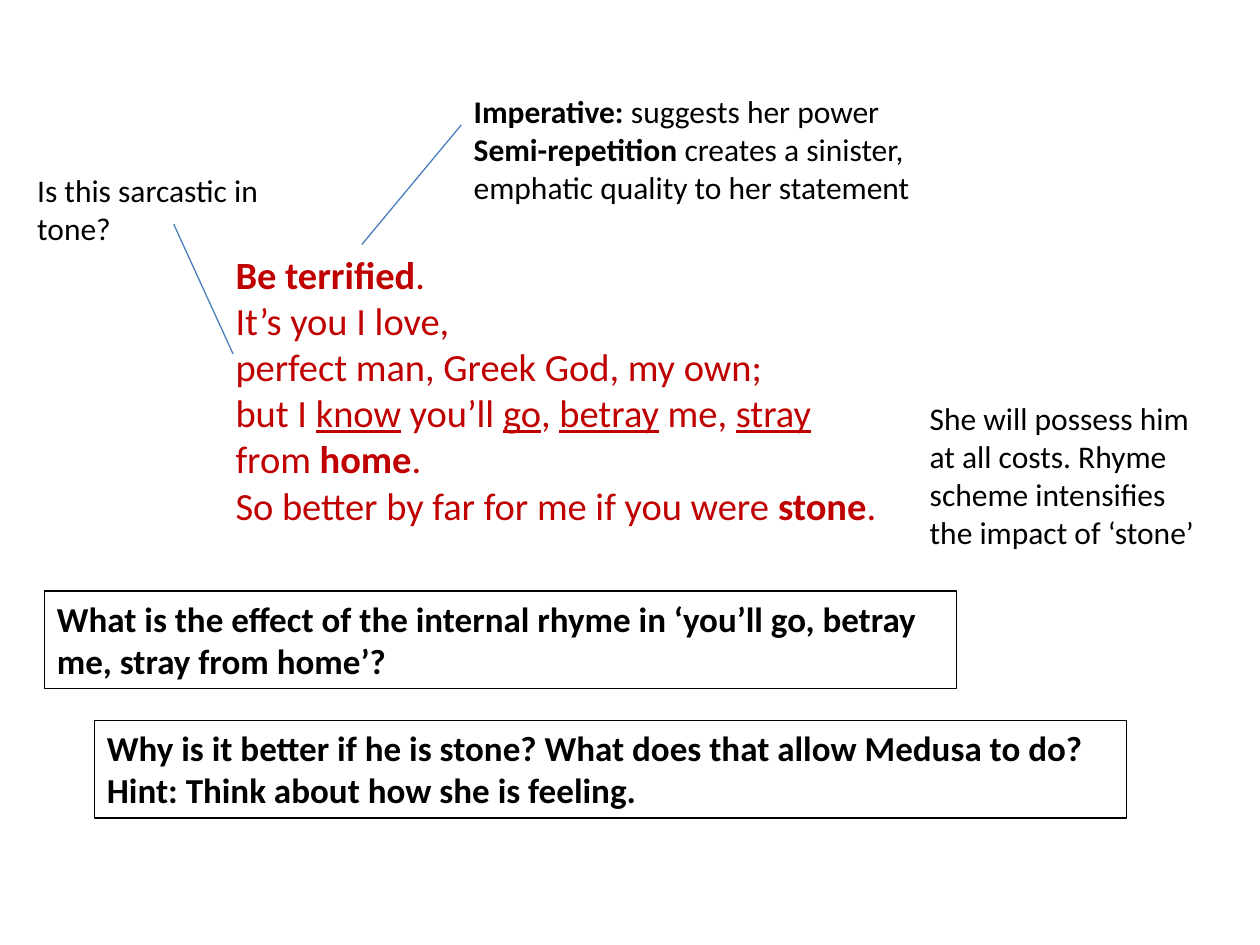
from pptx import Presentation
from pptx.dml.color import RGBColor
from pptx.enum.shapes import MSO_CONNECTOR as Connector, MSO_SHAPE as Shape
from pptx.enum.text import MSO_ANCHOR as Anchor, MSO_AUTO_SIZE as AutoSize, PP_ALIGN as Align
from pptx.oxml.ns import qn
from pptx.util import Pt
from lxml import etree

BLACK, RED, BLUE = "000000", "C00000", "4B7EBC"


def color(hex_value):
    return RGBColor.from_string(hex_value)


class Annotator:
    font = "Calibri"
    line_width = 0.75

    def __init__(self, slide):
        self.slide = slide

    def fill_text(self, shape, paragraphs, size, ink):
        """Each paragraph is a list of (text, style); style holds "b" and/or "u"."""
        frame = shape.text_frame
        frame.word_wrap = True
        frame.auto_size = AutoSize.SHAPE_TO_FIT_TEXT
        frame.vertical_anchor = Anchor.TOP
        for index, runs in enumerate(paragraphs):
            paragraph = frame.add_paragraph() if index else frame.paragraphs[0]
            paragraph.alignment = Align.LEFT
            for text, style in runs:
                run = paragraph.add_run()
                run.text = text
                font = run.font
                font.name, font.size = self.font, Pt(size)
                font.color.rgb = color(ink)
                font.bold = "b" in style
                font.underline = "u" in style

    def note(self, box, paragraphs, size=18, ink=BLACK):
        textbox = self.slide.shapes.add_textbox(*map(Pt, box))
        self.fill_text(textbox, paragraphs, size, ink)

    def question(self, box, text):
        frame = self.slide.shapes.add_shape(Shape.RECTANGLE, *map(Pt, box))
        frame.shadow.inherit = False
        frame.fill.background()
        frame.line.color.rgb = color(BLACK)
        frame.line.width = Pt(self.line_width)
        self.fill_text(frame, [[(text, "b")]], 20, BLACK)

    def pointer(self, start, end):
        line = self.slide.shapes.add_connector(Connector.STRAIGHT, *map(Pt, start + end))
        line.line.color.rgb = color(BLUE)
        line.line.width = Pt(self.line_width)
        etree.SubElement(line._element.spPr, qn("a:effectLst"))


def main():
    deck = Presentation()
    deck.slide_width, deck.slide_height = Pt(720), Pt(540)
    page = Annotator(deck.slides.add_slide(deck.slide_layouts[6]))

    # Stanza
    stanza = [
        [("Be terrified", "b"), (".", "")],
        [("It’s you I love,", "")],
        [("perfect man, Greek God, my own;", "")],
        [("but I ", ""), ("know", "u"), (" you’ll ", ""), ("go", "u"), (", ", ""),
         ("betray", "u"), (" me, ", ""), ("stray", "u")],
        [("from ", ""), ("home", "b"), (".", "")],
        [("So better by far for me if you were ", ""), ("stone", "b"), (".", "")],
    ]
    page.note((127.5, 139.7, 481.7, 167), stanza, 22, RED)

    # Annotations and their pointers
    page.pointer((206.8, 139.7), (263.6, 71.4))
    page.note((263.6, 49, 294.5, 72.7), [
        [("Imperative: ", "b"), ("suggests her power", "")],
        [("Semi-repetition", "b"),
         (" creates a sinister, emphatic quality to her statement", "")],
    ])
    page.note((524.2, 224.6, 175.7, 94.5), [
        [("She will possess him at all costs. Rhyme scheme intensifies "
          "the impact of ‘stone’", "")],
    ])
    page.pointer((133.2, 202.2), (99.3, 128.2))
    page.note((14.2, 94.3, 141.8, 51), [[("Is this sarcastic in tone?", "")]])

    # Questions
    page.question((25.4, 337.7, 521.3, 55.7),
                  "What is the effect of the internal rhyme in "
                  "‘you’ll go, betray me, stray from home’?")
    page.question((54, 411.8, 589.7, 55.7),
                  "Why is it better if he is stone? What does that allow Medusa to do? "
                  "Hint: Think about how she is feeling.")

    deck.save("out.pptx")


if __name__ == "__main__":
    main()
